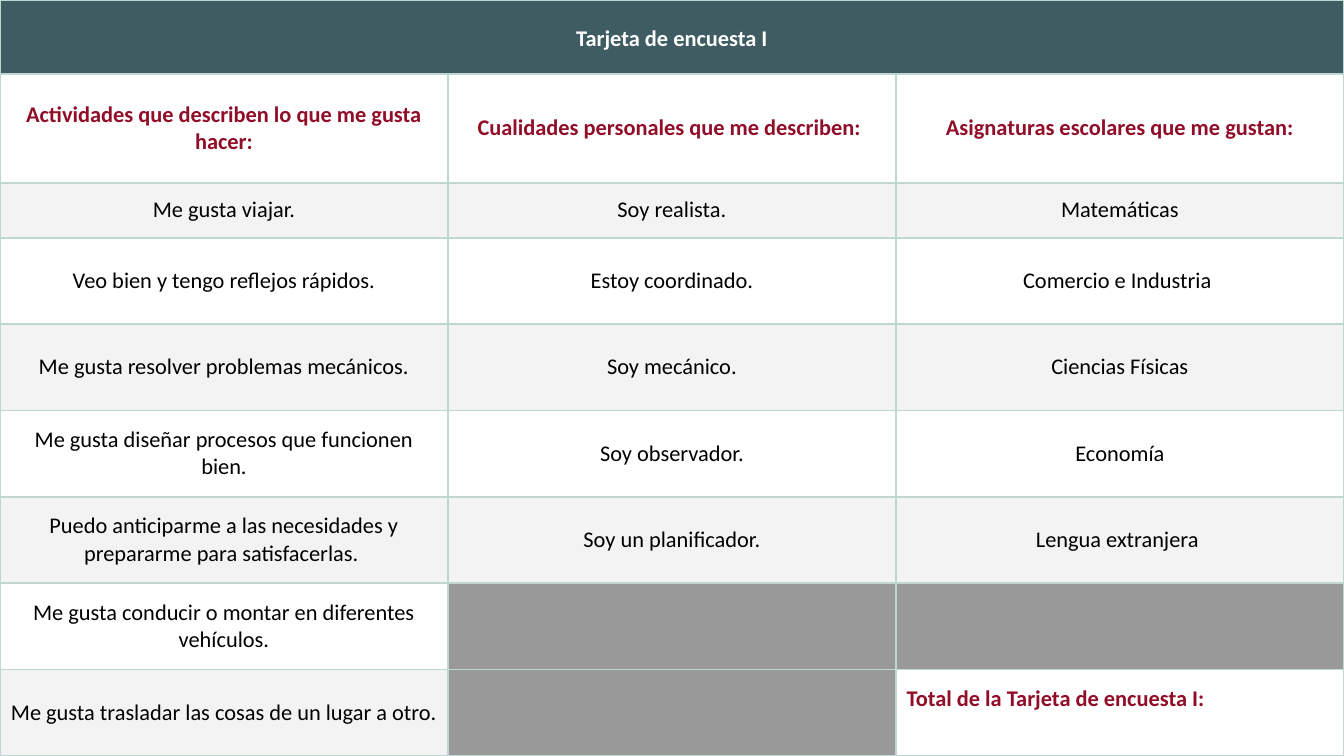
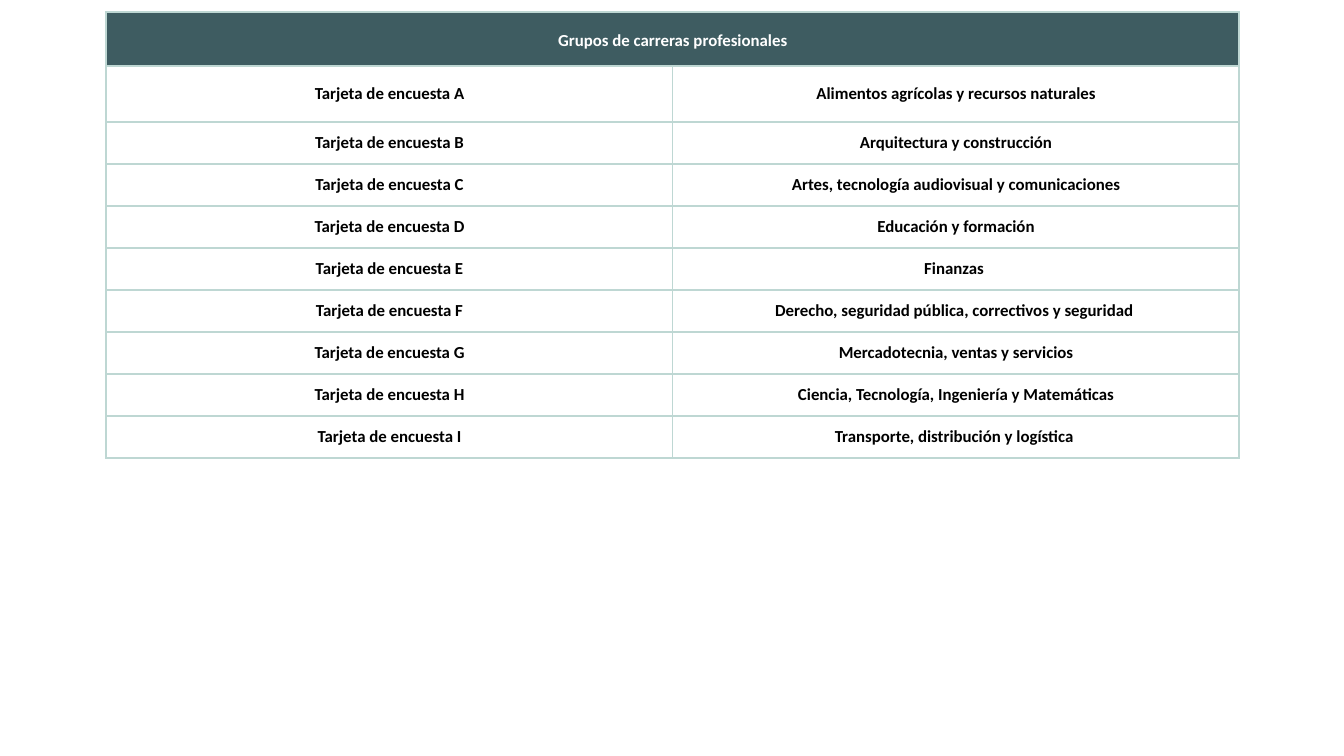
"""Build the survey card slide and the career cluster slide."""
from lxml.etree import SubElement
from pptx import Presentation
from pptx.dml.color import RGBColor
from pptx.enum.text import MSO_ANCHOR as Anchor, PP_ALIGN as Align
from pptx.oxml.ns import qn
from pptx.util import Inches, Pt

TEAL = RGBColor(0x3E, 0x5C, 0x61)
CRIMSON = RGBColor(0x91, 0x0D, 0x28)
BORDER = RGBColor(0xBE, 0xD7, 0xD3)
STRIPE = RGBColor(0xF3, 0xF3, 0xF3)
BLOCKED = RGBColor(0x99, 0x99, 0x99)
WHITE = RGBColor(0xFF, 0xFF, 0xFF)
BLACK = RGBColor(0, 0, 0)

FONT = "Calibri"
SLIDE_WIDTH = 10
SLIDE_HEIGHT = SLIDE_WIDTH * 9 / 16
MARGIN = Inches(0.08)
CELL_FORMAT = {
    "margin_left": MARGIN, "margin_right": MARGIN,
    "margin_top": MARGIN, "margin_bottom": MARGIN,
    "vertical_anchor": Anchor.MIDDLE,
}
TITLE_FORMAT = {"line_spacing": 1.15, "space_after": Pt(6)}
HEADING_FORMAT = {"space_before": Pt(10)}

SURVEY_TITLE = "Tarjeta de encuesta I"
SURVEY_HEADINGS = [
    "Actividades que describen lo que me gusta hacer:",
    "Cualidades personales que me describen: ",
    "Asignaturas escolares que me gustan:",
]
SURVEY_ROWS = [
    ("Me gusta viajar.", "Soy realista.", "Matemáticas"),
    ("Veo bien y tengo reflejos rápidos.", "Estoy coordinado.", "Comercio e Industria "),
    ("Me gusta resolver problemas mecánicos.", "Soy mecánico.", "Ciencias Físicas"),
    ("Me gusta diseñar procesos que funcionen bien.", "Soy observador.", "Economía"),
    ("Puedo anticiparme a las necesidades y prepararme para satisfacerlas. ",
     "Soy un planificador.", "Lengua extranjera "),
    ("Me gusta conducir o montar en diferentes vehículos.", "", ""),
    ("Me gusta trasladar las cosas de un lugar a otro. ", "",
     "Total de la Tarjeta de encuesta I:"),
]
CLUSTER_TITLE = "Grupos de carreras profesionales"
CLUSTERS = [
    "Alimentos agrícolas y recursos naturales",
    "Arquitectura y construcción",
    "Artes, tecnología audiovisual y comunicaciones",
    "Educación y formación",
    "Finanzas ",
    "Derecho, seguridad pública, correctivos y seguridad ",
    "Mercadotecnia, ventas y servicios",
    "Ciencia, Tecnología, Ingeniería y Matemáticas",
    "Transporte, distribución y logística ",
]


def apply_format(target, values):
    """Set each named attribute on the target."""
    for name, value in values.items():
        setattr(target, name, value)


def add_borders(cell):
    """Draw a one-point line on all four sides of the cell."""
    properties = cell._tc.get_or_add_tcPr()
    for side in ("a:lnL", "a:lnR", "a:lnT", "a:lnB"):
        line = SubElement(properties, qn(side), w=str(Pt(1)))
        fill = SubElement(line, qn("a:solidFill"))
        SubElement(fill, qn("a:srgbClr"), val=str(BORDER))


def fill_cell(cell, text, size, color=BLACK, bold=False, fill=WHITE,
              align=Align.CENTER, spacing=None):
    """Write the text in the cell and colour its background."""
    cell.fill.solid()
    cell.fill.fore_color.rgb = fill
    if not text:
        return
    paragraph = cell.text_frame.paragraphs[0]
    apply_format(paragraph, {"alignment": align, **(spacing or {})})
    run = paragraph.add_run()
    run.text = text
    apply_format(run.font, {"name": FONT, "size": Pt(size), "bold": bold})
    run.font.color.rgb = color


def add_titled_table(slide, box, column_count, top_heights, row_count, title, size):
    """Add a bordered table whose lower rows share the height left over."""
    left, top, width, height = map(Inches, box)
    table = slide.shapes.add_table(
        row_count, column_count, left, top, width, height).table
    apply_format(table, {"first_row": False, "horz_banding": False})
    for column in table.columns:
        column.width = width // column_count
    equal_count = row_count - len(top_heights)
    equal_height = (box[3] - sum(top_heights)) / equal_count
    for row, row_height in zip(table.rows, top_heights + [equal_height] * equal_count):
        row.height = Inches(row_height)
    for cell in table.iter_cells():
        apply_format(cell, CELL_FORMAT)
        add_borders(cell)
    table.cell(0, 0).merge(table.cell(0, column_count - 1))
    fill_cell(table.cell(0, 0), title, size, WHITE, True, TEAL, spacing=TITLE_FORMAT)
    return table


def add_survey_card(slide, box):
    """Place the survey card with striped answers and a total cell."""
    size = 12
    row_count = len(SURVEY_ROWS) + 2
    table = add_titled_table(slide, box, len(SURVEY_HEADINGS), [0.55, 0.81, 0.41],
                             row_count, SURVEY_TITLE, size)
    for column, heading in enumerate(SURVEY_HEADINGS):
        fill_cell(table.cell(1, column), heading, size, CRIMSON, True,
                  spacing=HEADING_FORMAT)
    *answer_rows, (last_activity, blocked, total) = SURVEY_ROWS
    for index, answers in enumerate([*answer_rows, (last_activity, blocked)]):
        stripe = WHITE if index % 2 else STRIPE
        for column, answer in enumerate(answers):
            fill_cell(table.cell(index + 2, column), answer, size,
                      fill=stripe if answer else BLOCKED)
    total_cell = table.cell(row_count - 1, 2)
    total_cell.margin_bottom = Inches(0.28)
    fill_cell(total_cell, total, size, CRIMSON, True, align=Align.LEFT,
              spacing=HEADING_FORMAT)


def add_cluster_key(slide, box):
    """Place the table that matches each survey card to a career cluster."""
    size = 9
    table = add_titled_table(slide, box, 2, [0.4, 0.42], len(CLUSTERS) + 1,
                             CLUSTER_TITLE, size)
    for row, (letter, cluster) in enumerate(zip("ABCDEFGHI", CLUSTERS), 1):
        spacing = HEADING_FORMAT if row == 1 else None
        for column, text in enumerate((f"Tarjeta de encuesta {letter}", cluster)):
            fill_cell(table.cell(row, column), text, size, bold=True, spacing=spacing)


def main():
    """Build both slides and save the presentation."""
    presentation = Presentation()
    apply_format(presentation, {"slide_width": Inches(SLIDE_WIDTH),
                                "slide_height": Inches(SLIDE_HEIGHT)})
    blank = presentation.slide_layouts[6]
    add_survey_card(presentation.slides.add_slide(blank),
                    (0, 0, SLIDE_WIDTH, SLIDE_HEIGHT))
    add_cluster_key(presentation.slides.add_slide(blank), (0.79, 0.09, 8.43, 3.3))
    presentation.save("out.pptx")


if __name__ == "__main__":
    main()
